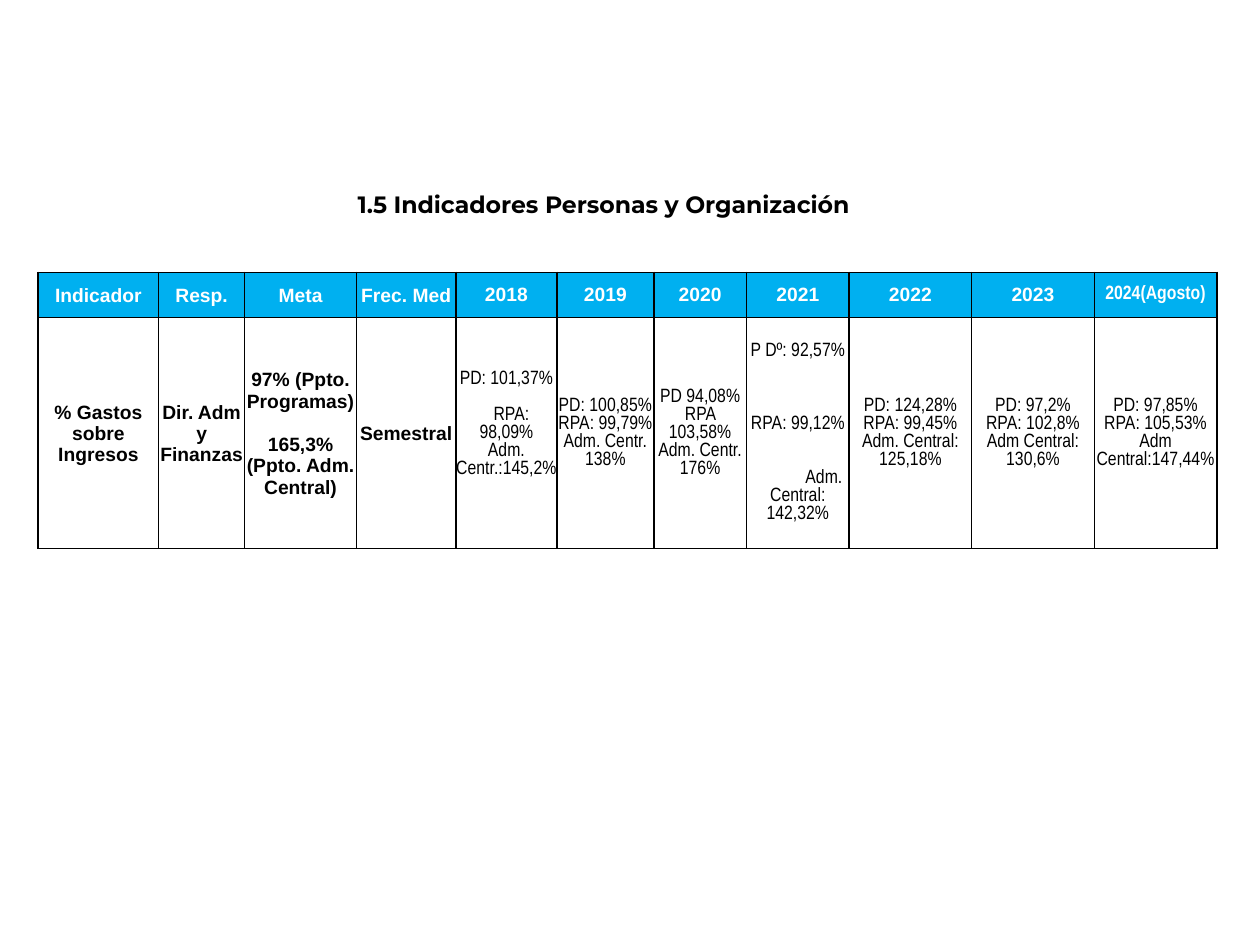
from dataclasses import dataclass

from lxml.etree import SubElement
from pptx import Presentation
from pptx.dml.color import RGBColor
from pptx.enum.text import MSO_ANCHOR as Anchor, PP_ALIGN as Align
from pptx.oxml.ns import qn
from pptx.table import _Cell as Cell
from pptx.util import Cm, Pt

BLACK = RGBColor(0, 0, 0)
WHITE = RGBColor(255, 255, 255)
SKY = RGBColor(0, 176, 240)

BODY_FONT = "Arial"
NARROW_FONT = "Arial Narrow"
TITLE_FONT = "Montserrat"


@dataclass
class Line:
    text: str
    before: float = 0  # points above the paragraph
    indent: float = 0  # first-line indent in cm


@dataclass
class Column:
    heading: str
    width: float  # cm
    lines: list[Line]
    is_year: bool = True
    heading_font: str = BODY_FONT
    bottom: float = 0  # cm below the values


COLUMNS = [
    Column("Indicador", 2.43, [Line("% Gastos sobre Ingresos")], False),
    Column("Resp.", 1.73, [Line("Dir. Adm y Finanzas")], False),
    Column("Meta", 2.26, [Line("97% (Ppto. Programas)"), Line("165,3%", 12.4),
                          Line("(Ppto. Adm. Central)")], False),
    Column("Frec. Med", 2.0, [Line("Semestral")], False),
    Column("2018", 2.04, [Line("PD: 101,37%"), Line("RPA: 98,09%", 10.3, 0.2),
                          Line("Adm. Centr.:145,2%")], bottom=0.36),
    Column("2019", 1.95, [Line("PD: 100,85%"), Line("RPA: 99,79%"),
                          Line("Adm. Centr. 138%")]),
    Column("2020", 1.87, [Line("PD 94,08%"), Line("RPA 103,58%"),
                          Line("Adm. Centr. 176%")]),
    Column("2021", 2.07, [Line("P Dº: 92,57%"), Line("RPA: 99,12%", 30.9),
                          Line("Adm. Central: 142,32%", 20.6, 1.05)]),
    Column("2022", 2.47, [Line("PD: 124,28%"), Line("RPA: 99,45%"),
                          Line("Adm. Central: 125,18%")]),
    Column("2023", 2.47, [Line("PD: 97,2%"), Line("RPA: 102,8%"),
                          Line("Adm Central: 130,6%")]),
    Column("2024(Agosto)", 2.47, [Line("PD: 97,85%"), Line("RPA: 105,53%"),
                                  Line("Adm Central:147,44%")],
           heading_font=NARROW_FONT),
]


def write_lines(frame, lines: list[Line], font: str, size: float,
                color: RGBColor, bold: bool) -> None:
    for index, line in enumerate(lines):
        para = frame.add_paragraph() if index else frame.paragraphs[0]
        para.alignment = Align.CENTER
        if line.before:
            para.space_before = Pt(line.before)
        if line.indent:
            para._p.get_or_add_pPr().set("indent", str(Cm(line.indent)))
        span = para.add_run()
        span.text = line.text
        span.font.name = font
        span.font.size = Pt(size)
        span.font.bold = bold
        span.font.color.rgb = color


def style_cell(cell: Cell, fill: RGBColor, side: float, top: float,
               bottom: float = 0) -> None:
    cell.vertical_anchor = Anchor.MIDDLE
    cell.margin_left = cell.margin_right = Cm(side)
    cell.margin_top, cell.margin_bottom = Cm(top), Cm(bottom)
    # Borders come before the fill in the cell properties
    properties = cell._tc.get_or_add_tcPr()
    for edge in ("a:lnL", "a:lnR", "a:lnT", "a:lnB"):
        border = SubElement(properties, qn(edge), w=str(Pt(1)))
        paint = SubElement(border, qn("a:solidFill"))
        SubElement(paint, qn("a:srgbClr"), val=str(BLACK))
    cell.fill.solid()
    cell.fill.fore_color.rgb = fill


def add_title(page, text: str) -> None:
    box = page.shapes.add_textbox(Cm(4.45), Cm(3.33), Cm(15.44), Cm(1.55))
    frame = box.text_frame
    frame.word_wrap = True
    frame.vertical_anchor = Anchor.MIDDLE
    write_lines(frame, [Line(text)], TITLE_FONT, 13.5, BLACK, True)


def add_indicator_table(page, columns: list[Column]) -> None:
    heights = (0.91, 4.66)
    width = sum(column.width for column in columns)
    table = page.shapes.add_table(2, len(columns), Cm(0.77), Cm(5.49),
                                  Cm(width), Cm(sum(heights))).table
    table.first_row = table.horz_banding = False
    for row, height in zip(table.rows, heights):
        row.height = Cm(height)

    for index, column in enumerate(columns):
        table.columns[index].width = Cm(column.width)
        heading, value = table.cell(0, index), table.cell(1, index)
        year = column.is_year
        edge = 0 if year else 0.03
        style_cell(heading, SKY, 0.1 if year else 0.03, edge)
        style_cell(value, WHITE, edge, edge, column.bottom)
        write_lines(heading.text_frame, [Line(column.heading)],
                    column.heading_font, 11, WHITE, True)
        write_lines(value.text_frame, column.lines,
                    NARROW_FONT if year else BODY_FONT, 11, BLACK, not year)


def main() -> None:
    deck = Presentation()
    deck.slide_width, deck.slide_height = Cm(25.4), Cm(19.05)
    page = deck.slides.add_slide(deck.slide_layouts[6])
    add_title(page, "1.5 Indicadores Personas y Organización")
    add_indicator_table(page, COLUMNS)
    deck.save("out.pptx")


if __name__ == "__main__":
    main()
